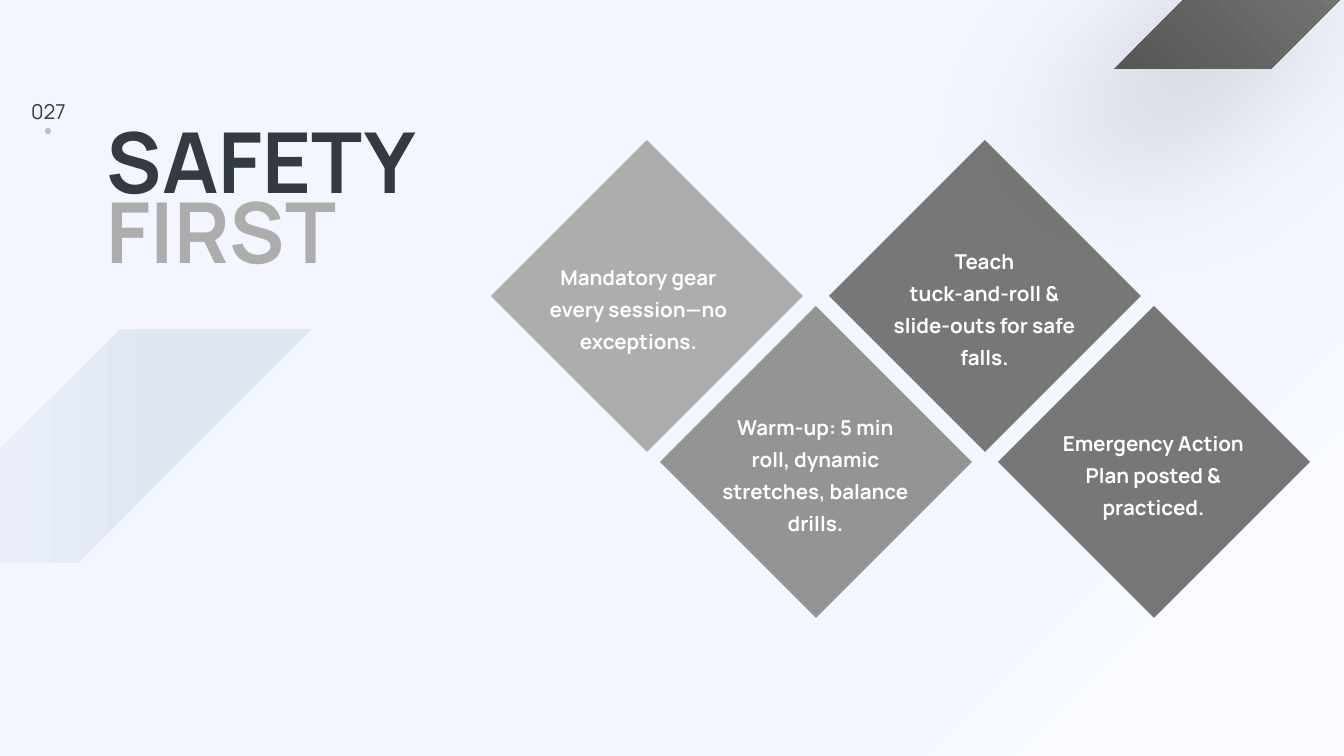
"""Build the SAFETY FIRST slide with four diamond rules."""
from dataclasses import dataclass

from lxml import etree
from pptx import Presentation
from pptx import util as u
from pptx.dml.color import RGBColor
from pptx.enum import shapes, text
from pptx.oxml import parse_xml
from pptx.oxml.ns import nsdecls, qn

EMU_PER_PX = 914400 / 134.4


def px(n):
    return u.Emu(round(n * EMU_PER_PX))


@dataclass(frozen=True)
class Theme:
    font: str = "Manrope"
    back: str = "F3F6FF"
    glow: str = "F9FBFF"
    mist: str = "DEE7F2"
    ink: str = "333A41"
    white: str = "FFFFFF"
    light: str = "ADADAD"
    mid: str = "949494"
    dark: str = "777777"
    deep: str = "565656"
    dot: str = "BEBFC1"
    shadow: str = "000000"
    title_size: int = 45
    body_size: int = 11


class Deck:
    def __init__(self, theme):
        self.theme = theme
        self.prs = Presentation()
        self.prs.slide_width, self.prs.slide_height = px(1344), px(756)
        self.s = self.prs.slides.add_slide(self.prs.slide_layouts[6])
        fill = self.s.background.fill
        fill.solid()
        fill.fore_color.rgb = RGBColor.from_string(theme.back)

    def shape(self, kind, x, y, w, h, color):
        sp = self.s.shapes.add_shape(kind, px(x), px(y), px(w), px(h))
        return self.paint(sp, color)

    def paint(self, sp, color):
        sp.shadow.inherit = False
        sp.line.fill.background()
        sp.fill.solid()
        sp.fill.fore_color.rgb = RGBColor.from_string(color)
        return sp

    def polygon(self, points, color):
        builder = self.s.shapes.build_freeform(*points[0], scale=EMU_PER_PX)
        builder.add_line_segments(points[1:], close=True)
        return self.paint(builder.convert_to_shape(), color)

    def parallelogram(self, x, y, w, h):
        sp = self.shape(shapes.MSO_SHAPE.PARALLELOGRAM, x, y, w, h, self.theme.mist)
        sp.adjustments[0] = 1
        return sp

    def gradient(self, sp, stops, direction):
        marks = "".join(
            f'<a:gs pos="{pos * 1000}"><a:srgbClr val="{color}"/></a:gs>'
            for pos, color in stops
        )
        grad = parse_xml(
            f'<a:gradFill {nsdecls("a")} rotWithShape="1">'
            f"<a:gsLst>{marks}</a:gsLst>{direction}</a:gradFill>"
        )
        solid = sp._element.spPr.find(qn("a:solidFill"))
        solid.getparent().replace(solid, grad)

    def shadow(self, sp, blur, dist, angle, alpha):
        effects = sp._element.spPr.find(qn("a:effectLst"))
        outer = etree.SubElement(
            effects, qn("a:outerShdw"), blurRad=str(u.Pt(blur)),
            dist=str(u.Pt(dist)), dir=str(angle * 60000),
            algn="ctr", rotWithShape="0",
        )
        color = etree.SubElement(outer, qn("a:srgbClr"), val=self.theme.shadow)
        etree.SubElement(color, qn("a:alpha"), val=str(alpha * 1000))

    def label(self, x, y, w, h, parts, size, spacing=1.0, bold=True, centred=True):
        tf = self.s.shapes.add_textbox(px(x), px(y), px(w), px(h)).text_frame
        tf.word_wrap = True
        tf.auto_size = text.MSO_AUTO_SIZE.SHAPE_TO_FIT_TEXT
        tf.margin_left = tf.margin_right = px(10)
        tf.margin_top = tf.margin_bottom = px(5)
        p = tf.paragraphs[0]
        p.line_spacing = spacing
        p.alignment = text.PP_ALIGN.CENTER if centred else text.PP_ALIGN.LEFT
        for words, color in parts:
            r = p.add_run()
            r.text = words
            r.font.name = self.theme.font
            r.font.size = u.Pt(size)
            r.font.bold = bold
            r.font.color.rgb = RGBColor.from_string(color)


def main():
    t = Theme()
    deck = Deck(t)

    corner = deck.polygon([(840, 756), (1344, 252), (1344, 756)], t.glow)
    deck.gradient(corner, [(0, t.glow), (24, t.glow), (50, t.back)],
                  '<a:lin ang="13500000" scaled="0"/>')
    deck.label(0, 94, 97, 34, [("027", t.ink)], t.body_size, bold=False)
    deck.shape(shapes.MSO_SHAPE.OVAL, 45, 128, 6, 6, t.dot)

    rules = [
        (t.light, "Mandatory gear every session—no exceptions.", 40, 132),
        (t.mid, "Warm‑up: 5 min roll, dynamic stretches, balance drills.", 48, 164),
        (t.dark, "Teach tuck‑and‑roll & slide‑outs for safe falls.", 48, 164),
        (t.dark, "Emergency Action Plan posted & practiced.", 48, 132),
    ]
    side = 312
    for i, (color, words, inset, height) in enumerate(rules):
        x, y = 491 + 169 * i, 140 + 166 * (i % 2)
        deck.shape(shapes.MSO_SHAPE.DIAMOND, x, y, side, side, color)
        deck.label(x + inset, y + side // 2 + 23 - height // 2, 215, height,
                   [(words, t.white)], t.body_size, 1.3)

    deck.label(97, 132, 474, 153, [("SAFETY ", t.ink), ("FIRST", t.light)],
               t.title_size, 0.7, centred=False)

    banner = deck.parallelogram(1114, -113, 339, 182)
    deck.gradient(banner, [(0, t.light), (35, t.dark), (100, t.deep)],
                  '<a:path path="circle">'
                  '<a:fillToRect l="100000" b="100000"/></a:path>')
    deck.shadow(banner, 75, 68, 135, 14)
    ribbon = deck.parallelogram(-113, 329, 425, 234)
    deck.gradient(ribbon, [(0, t.mist), (35, t.mist), (100, t.back)],
                  '<a:lin ang="10800000" scaled="0"/>')

    deck.prs.save("out.pptx")


if __name__ == "__main__":
    main()
